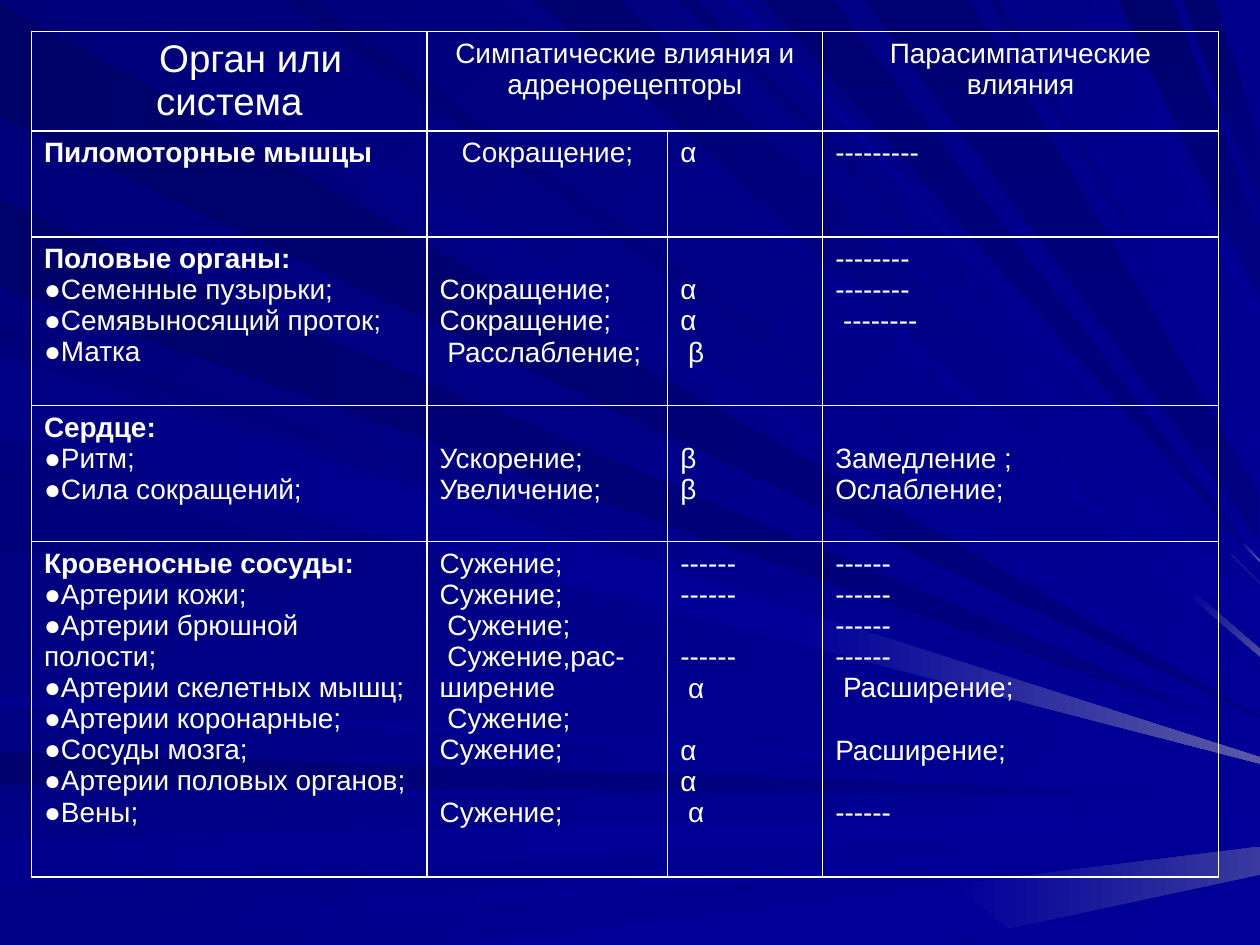
"""Builds a slide with a table of autonomic effects on organs over a field of blue rays."""
import pptx
import pptx.dml.color
import pptx.enum.text
import pptx.oxml
import pptx.oxml.ns
import pptx.util

THEME = {
    "font": "Arial", "ink": "FFFFFF", "head": 22, "body": 16, "line": 18, "border": 1,
    "back": ("000078", "000099", 45),
}
UNIT = pptx.util.Inches(0.01)
MID = pptx.enum.text.PP_ALIGN.CENTER


def paint(fill, first, last=None, angle=0):
    if last is None:
        fill.solid()
        fill.fore_color.rgb = pptx.dml.color.RGBColor.from_string(first)
        return
    fill.gradient()
    fill.gradient_angle = (360 - angle) % 360
    for stop, tone, place in zip(fill.gradient_stops, (first, last), (0, 1)):
        stop.color.rgb = pptx.dml.color.RGBColor.from_string(tone)
        stop.position = place


def write(cell, text, size=THEME["body"], align=None, bold=False, indent=0):
    frame = cell.text_frame
    gap, fresh = 0, True
    for line in text.split("\n"):
        if not line:
            gap += THEME["line"]
            continue
        para = frame.paragraphs[0] if fresh else frame.add_paragraph()
        if fresh:
            cell.margin_top = pptx.util.Inches(0.05) + pptx.util.Pt(gap)
        elif gap:
            para.space_before = pptx.util.Pt(gap)
        if indent:
            para._p.get_or_add_pPr().set("indent", str(pptx.util.Inches(indent)))
        if align is not None:
            para.alignment = align
        run = para.add_run()
        run.text = line
        run.font.name = THEME["font"]
        run.font.size = pptx.util.Pt(size)
        run.font.bold = bold and fresh
        run.font.color.rgb = pptx.dml.color.RGBColor.from_string(THEME["ink"])
        gap, fresh = 0, False


RAYS = [
    ("556,317 0,2 0,93 529,345 1000,570 1000,569", "000069", "000080", 0),
    ("577,298 101,0 26,0 563,310 1000,563 1000,562", "00007B", "000099", 45),
    ("0,623 701,629 701,621 0,596", "000071", "000080", 0),
    ("1000,632 1000,631 701,621 701,629", "000080", "000099", 0),
    ("0,704 831,660 831,647 0,665", "00008C", "000099", 0),
    ("1000,651 1000,643 831,647 831,660", "000099"),
    ("1000,662 628,689 628,697", "000099"),
    ("0,750 54,750 628,697 628,689 0,735", "000085", "000099", 0),
    ("742,750 801,737 756,702 364,750", "000099"),
    ("1000,694 1000,672 756,702 800,737", "000099", "39399E", 0),
    ("1000,589 873,547 873,548", "000099"),
    ("0,270 873,548 873,547 0,258", "000076", "000099", 45),
    ("1000,585 1000,584 873,529 873,539", "000080", "000099", 0),
    ("0,228 873,539 873,529 0,159", "00006B", "000080", 0),
    ("398,0 944,473 947,469 416,0", "000083", "000099", 45),
    ("1000,521 1000,515 947,469 944,473", "000099", "4A4AA1", 45),
    ("1000,507 1000,479 968,449 951,465", "000099"),
    ("426,0 951,465 968,449 492,0", "00006D", "000099", 45),
    ("1000,463 977,440 977,440", "FF9999"),
    ("540,0 977,440 977,440 552,0", "000073", "000099", 45),
    ("606,0 985,431 987,430 661,0", "000073", "000080", 90),
    ("1000,446 1000,445 987,430 985,431", "000099", "5A5AA6", 45),
    ("1000,237 1000,183 986,148 973,181", "000080"),
    ("887,0 973,181 986,148 930,0", "00006B", "000080", 90),
    ("964,0 939,0 989,138 999,113", "00006D", "000080", 90),
    ("989,138 1000,167 1000,114 999,113", "000080"),
    ("0,342 999,602 999,596 0,278", "00007E", "000099", 45),
    ("0,437 999,606 999,605 0,374", "00007B", "000099", 45),
    ("0,560 999,623 999,621 0,552", "00008E", "000099", 0),
    ("225,0 999,552 999,547 247,0", "000070", "000099", 45),
    ("577,0 999,454 999,453 588,0", "00008E", "000099", 45),
    ("770,0 686,0 999,428 999,390 998,390", "000073", "000080", 90),
    ("785,0 999,360 999,354 792,0", "000078", "000099", 45),
    ("815,0 999,336 999,335 824,0", "000085", "000099", 45),
    ("999,249 872,0 865,0 999,258", "00008A", "000099", 45),
    ("0,283 0,347 633,511 635,498 637,485", "000085", "000099", 0),
    ("1000,601 637,485 635,498 633,511 1000,606", "000099", "5A5AA6", 0),
]
COLS = [3.14, 1.91, 1.23, 3.14]
ROWS = [0.79, 0.84, 1.34, 1.08, 2.66]
HEADS = ["Орган или система", "Симпатические влияния и адренорецепторы", "", "Парасимпатические влияния"]
BODY = [
    ["Пиломоторные мышцы", "Сокращение;", "α", "---------"],
    ["Половые органы:\n●Семенные пузырьки;\n●Семявыносящий проток;\n●Матка",
     "\nСокращение;\nСокращение;\n Расслабление;", "\nα\nα\n β", "--------\n--------\n --------"],
    ["Сердце:\n●Ритм;\n●Сила сокращений;", "\nУскорение;\nУвеличение;", "\nβ\nβ",
     "\nЗамедление ;\nОслабление;"],
    ["Кровеносные сосуды:\n●Артерии кожи;\n●Артерии брюшной полости;\n●Артерии скелетных мышц;\n"
     "●Артерии коронарные;\n●Сосуды мозга;\n●Артерии половых органов;\n●Вены;",
     "Сужение;\nСужение;\n Сужение;\n Сужение,рас- ширение\n Сужение;\nСужение;\n\nСужение;",
     "------\n------\n\n------\n α\n\nα\nα\n α",
     "------\n------\n------\n------\n Расширение;\n\nРасширение;\n\n------"],
]

deck = pptx.Presentation()
deck.slide_width, deck.slide_height = 1000 * UNIT, 750 * UNIT
slide = deck.slides.add_slide(deck.slide_layouts[6])
paint(slide.background.fill, *THEME["back"])

for path, *tones in RAYS:
    dots = [tuple(map(int, dot.split(","))) for dot in path.split()]
    pen = slide.shapes.build_freeform(*dots[0], scale=UNIT)
    pen.add_line_segments(dots[1:], close=True)
    ray = pen.convert_to_shape()
    ray.shadow.inherit = False
    ray.line.fill.background()
    paint(ray.fill, *tones)

edge = 25 * UNIT
width, height = (pptx.util.Inches(sum(sizes)) for sizes in (COLS, ROWS))
table = slide.shapes.add_table(len(ROWS), len(COLS), edge, edge, width, height).table
table.first_row = table.horz_banding = False
for col, size in zip(table.columns, COLS):
    col.width = pptx.util.Inches(size)
for row, size in zip(table.rows, ROWS):
    row.height = pptx.util.Inches(size)
table.cell(0, 1).merge(table.cell(0, 2))

for x, head in enumerate(HEADS):
    if head:
        write(table.cell(0, x), head, align=MID, size=THEME["body"] if x else THEME["head"],
              indent=0 if x else 0.34)
for y, texts in enumerate(BODY, 1):
    for x, text in enumerate(texts):
        write(table.cell(y, x), text, bold=x == 0, align=MID if (y, x) == (1, 1) else None)

for cell in table.iter_cells():
    props = cell._tc.get_or_add_tcPr()
    for side in ("lnL", "lnR", "lnT", "lnB"):
        props.append(pptx.oxml.parse_xml(
            f'<a:{side} {pptx.oxml.ns.nsdecls("a")} w="{pptx.util.Pt(THEME["border"])}">'
            f'<a:solidFill><a:srgbClr val="{THEME["ink"]}"/></a:solidFill></a:{side}>'))
    cell.fill.background()

deck.save("out.pptx")
